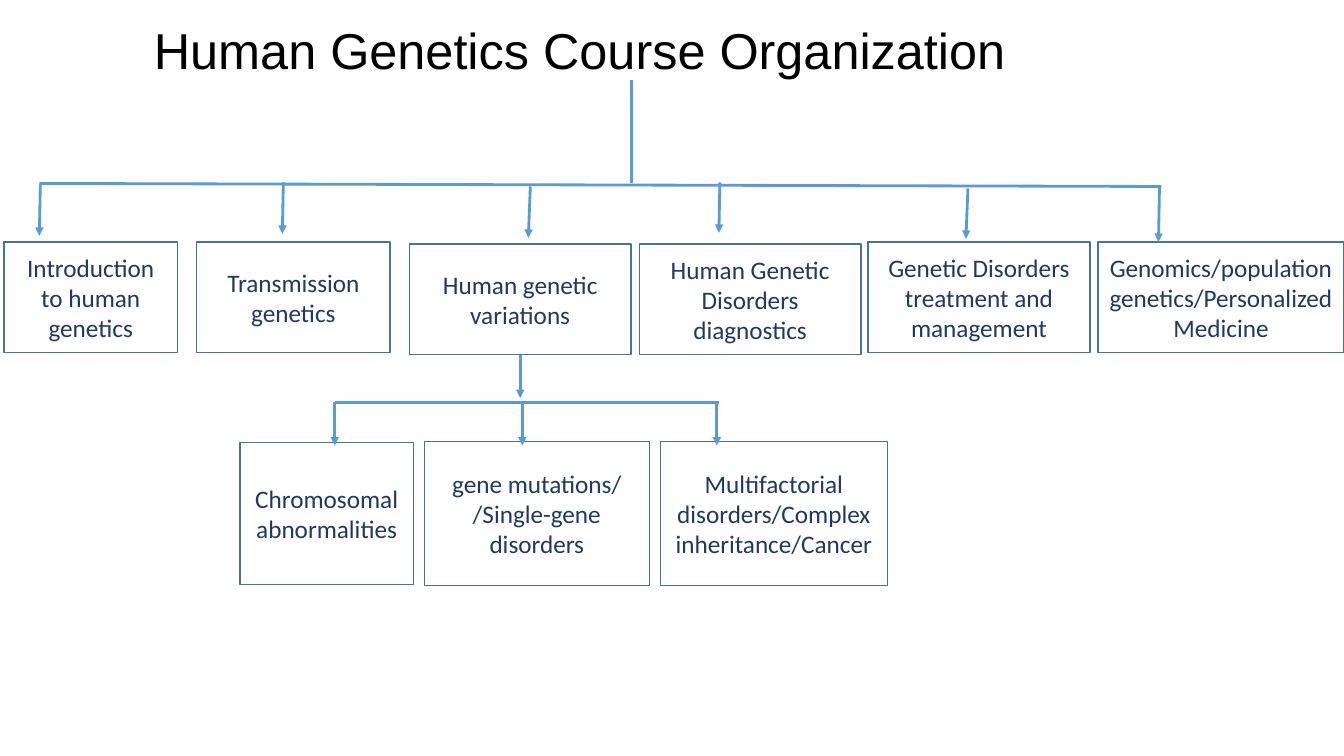
from dataclasses import dataclass

from lxml import etree
from pptx import Presentation
from pptx import util as u
from pptx.dml.color import RGBColor
from pptx.enum import shapes, text
from pptx.oxml import ns

EMU_PER_PX = 9144  # 100 px to the inch
COLORS = {
    "title": "000000",
    "label": "203864",
    "border": "43739E",
    "connector": "5B9BD5",
}


@dataclass
class Box:
    label: str
    left: int
    top: int
    width: int
    height: int


@dataclass
class Line:
    x1: int
    y1: int
    x2: int
    y2: int
    arrow: bool = True


TOPIC_HEIGHT = 110
VARIATIONS = Box("Human genetic variations", 406, 242, 220, TOPIC_HEIGHT)
BOXES = [
    # Course topics
    Box("Introduction to human genetics", 4, 240, 172, TOPIC_HEIGHT),
    Box("Transmission genetics", 195, 240, 192, TOPIC_HEIGHT),
    VARIATIONS,
    Box("Human Genetic Disorders diagnostics", 634, 242, 220, TOPIC_HEIGHT),
    Box("Genetic Disorders treatment and management", 861, 240, 220, TOPIC_HEIGHT),
    Box("Genomics/population genetics/Personalized Medicine", 1089, 240, 244, TOPIC_HEIGHT),
    # Kinds of variation
    Box("Chromosomal abnormalities", 238, 439, 172, 141),
    Box("gene mutations/\n/Single-gene disorders", 421, 438, 223, 143),
    Box("Multifactorial disorders/Complex inheritance/Cancer", 655, 438, 225, 143),
]
LINES = [
    # Trunk and bar under the title
    Line(626, 79, 626, 182, arrow=False),
    Line(39, 182, 1152, 185, arrow=False),
    # Arrows to the course topics
    Line(40, 183, 39, 234),
    Line(281, 181, 280, 232),
    Line(526, 185, 524, 236),
    Line(714, 181, 713, 231),
    Line(960, 187, 958, 237),
    Line(1150, 185, 1149, 240),
    # Bar and arrows to the kinds of variation
    Line(713, 399, 332, 399, arrow=False),
    *(Line(x, 399, x, 442) for x in (332, 518, 711)),
]


def px(value: int) -> u.Emu:
    return u.Emu(value * EMU_PER_PX)


def color(name: str) -> RGBColor:
    return RGBColor.from_string(COLORS[name])


def write_text(shape, content: str, *, size: int, font: str, fill: str,
               spacing: float = 1.0) -> None:
    frame = shape.text_frame
    frame.word_wrap = True
    frame.vertical_anchor = text.MSO_ANCHOR.MIDDLE
    frame.text = content
    for paragraph in frame.paragraphs:
        paragraph.alignment = text.PP_ALIGN.CENTER
        paragraph.line_spacing = spacing
        paragraph.font.size = u.Pt(size)
        paragraph.font.name = font
        paragraph.font.color.rgb = color(fill)


def draw_box(slide, box: Box):
    shape = slide.shapes.add_shape(
        shapes.MSO_SHAPE.RECTANGLE,
        px(box.left), px(box.top), px(box.width), px(box.height))
    shape.shadow.inherit = False
    shape.fill.background()
    shape.line.color.rgb = color("border")
    shape.line.width = u.Pt(1)
    write_text(shape, box.label, size=18, font="Calibri", fill="label")
    return shape


def draw_line(slide, line: Line):
    connector = slide.shapes.add_connector(
        shapes.MSO_CONNECTOR.STRAIGHT,
        px(line.x1), px(line.y1), px(line.x2), px(line.y2))
    connector.line.color.rgb = color("connector")
    connector.line.width = u.Pt(2)
    properties = connector._element.spPr
    if line.arrow:
        outline = properties.find(ns.qn("a:ln"))
        etree.SubElement(outline, ns.qn("a:tailEnd"), type="triangle")
    etree.SubElement(properties, ns.qn("a:effectLst"))
    return connector


def main() -> None:
    presentation = Presentation()
    presentation.slide_width, presentation.slide_height = px(1333), px(750)
    slide = presentation.slides.add_slide(presentation.slide_layouts[6])

    # Title
    title = slide.shapes.add_textbox(px(0), px(0), px(1150), px(106))
    write_text(title, "Human Genetics Course Organization",
               size=36, font="Arial", fill="title", spacing=0.9)

    # Boxes and lines
    drawn = {box.label: draw_box(slide, box) for box in BOXES}
    for line in LINES:
        draw_line(slide, line)

    # Arrow leaving the variations box
    branch = draw_line(slide, Line(516, 352, 516, 395))
    branch.begin_connect(drawn[VARIATIONS.label], 2)

    presentation.save("out.pptx")


if __name__ == "__main__":
    main()
